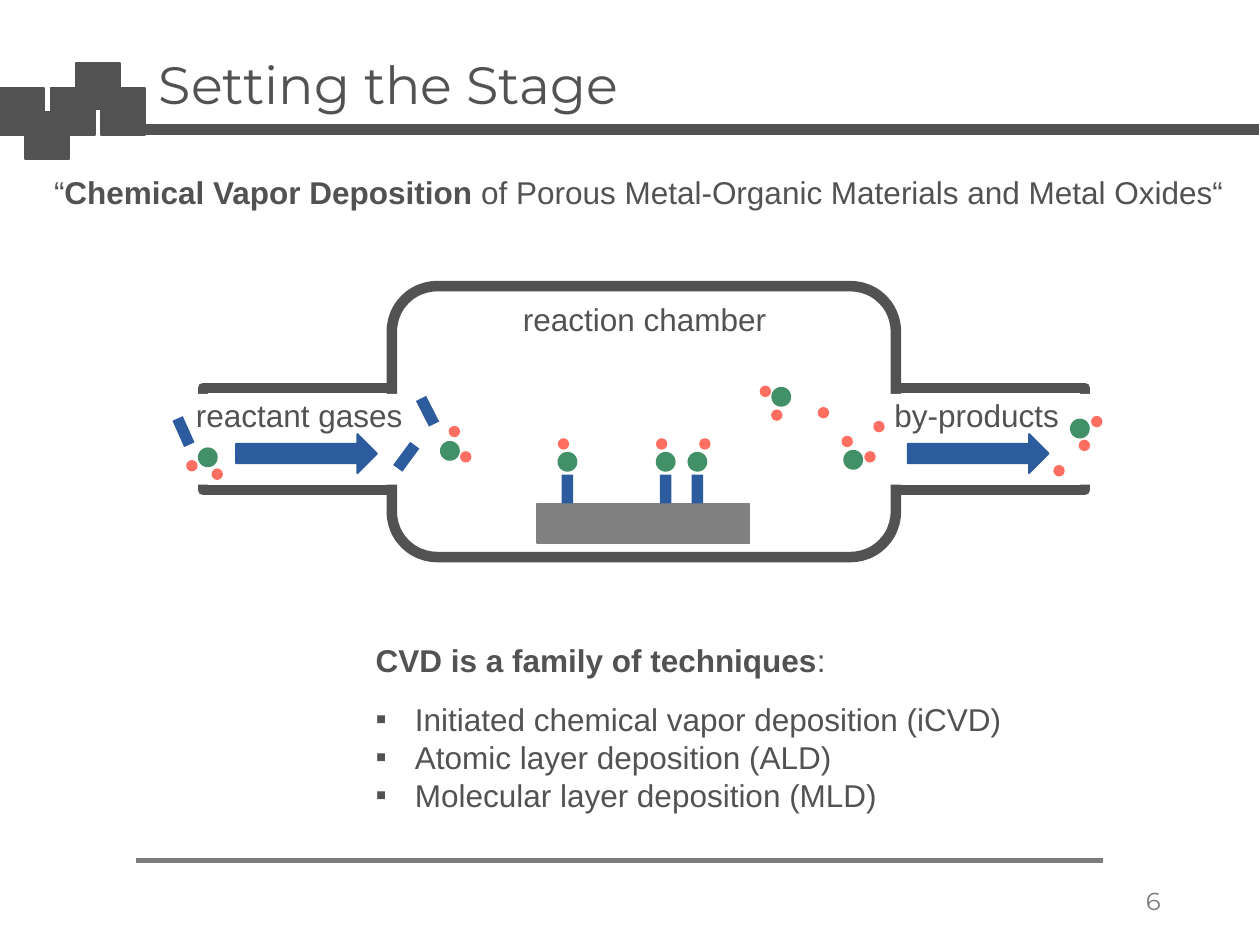
from lxml import etree
from pptx import Presentation
from pptx import util as u
from pptx.dml.color import RGBColor
from pptx.enum import shapes, text
from pptx.oxml.ns import qn

COLORS = {
    "ink": "525252",
    "rule": "7C7C7C",
    "paper": "FFFFFF",
    "substrate": "808080",
    "organic": "2D5C9E",
    "metal": "429067",
    "ligand": "FF6F61",
}
BODY_FONT = "Arial"
TITLE_FONT = "Montserrat"
METAL_SIZE = 0.4
LIGAND_SIZE = 0.23
ROD_WIDTH, ROD_HEIGHT = 0.23, 0.58
Shape = shapes.MSO_SHAPE


def color(name):
    return RGBColor.from_string(COLORS[name])


class SlideBuilder:
    def __init__(self, page):
        self.page = page

    def place(self, item, left, top, width, height):
        item.left, item.top = u.Cm(left), u.Cm(top)
        item.width, item.height = u.Cm(width), u.Cm(height)

    def shape(self, kind, left, top, width, height, fill, line=None, weight=1, angle=0):
        shape = self.page.shapes.add_shape(
            kind, u.Cm(left), u.Cm(top), u.Cm(width), u.Cm(height))
        shape.shadow.inherit = False
        shape.fill.solid()
        shape.fill.fore_color.rgb = color(fill)
        if line:
            shape.line.color.rgb = color(line)
            shape.line.width = u.Pt(weight)
        else:
            shape.line.fill.background()
        shape.rotation = angle
        return shape

    def rule(self, start, end, y, weight):
        line = self.page.shapes.add_connector(
            shapes.MSO_CONNECTOR.STRAIGHT, u.Cm(start), u.Cm(y), u.Cm(end), u.Cm(y))
        line.line.color.rgb = color("rule")
        line.line.width = u.Pt(weight)
        etree.SubElement(line._element.spPr, qn("a:effectLst"))

    def span(self, para, words, size=18, bold=False, font=BODY_FONT, ink="ink"):
        span = para.add_run()
        span.text = words
        span.font.name = font
        span.font.size = u.Pt(size)
        span.font.bold = bold
        span.font.color.rgb = color(ink)

    def text_box(self, left, top, width, height, wrap=True):
        box = self.page.shapes.add_textbox(
            u.Cm(left), u.Cm(top), u.Cm(width), u.Cm(height))
        box.text_frame.word_wrap = wrap
        return box.text_frame

    def label(self, words, left, top, width):
        frame = self.text_box(left, top, width, 1.02, wrap=False)
        self.span(frame.paragraphs[0], words)

    def title(self, words, left, top, width, height):
        title = self.page.shapes.title
        self.place(title, left, top, width, height)
        frame = title.text_frame
        frame.auto_size = text.MSO_AUTO_SIZE.NONE
        frame.vertical_anchor = text.MSO_ANCHOR.MIDDLE
        para = frame.paragraphs[0]
        para.alignment = text.PP_ALIGN.LEFT
        para.line_spacing = 0.9
        self.span(para, words, 30, font=TITLE_FONT)

    def bullet(self, para, mark=None, indent=0):
        properties = para._p.get_or_add_pPr()
        properties.set("marL", str(u.Cm(indent)))
        properties.set("indent", str(-u.Cm(indent)))
        if mark:
            etree.SubElement(properties, qn("a:buFont"), typeface=BODY_FONT)
            etree.SubElement(properties, qn("a:buChar"), char=mark)
        else:
            etree.SubElement(properties, qn("a:buNone"))

    def bullet_list(self, heading, items, left, top, width, height):
        body = self.page.placeholders[1]
        self.place(body, left, top, width, height)
        frame = body.text_frame
        frame.auto_size = text.MSO_AUTO_SIZE.NONE
        para = frame.paragraphs[0]
        self.bullet(para)
        para.space_before = u.Pt(0)
        self.span(para, heading, bold=True)
        self.span(para, ":")
        for index, item in enumerate(items):
            para = frame.add_paragraph()
            self.bullet(para, "▪", 0.79)
            para.space_before = u.Pt(0 if index else 12)
            self.span(para, item)

    def atom(self, x, y, size, fill):
        self.shape(Shape.OVAL, x - size / 2, y - size / 2, size, size, fill)

    def rod(self, x, y, angle=0):
        self.shape(Shape.RECTANGLE, x - ROD_WIDTH / 2, y - ROD_HEIGHT / 2,
                   ROD_WIDTH, ROD_HEIGHT, "organic", angle=angle)

    def molecule(self, metal, ligands):
        self.atom(*metal, METAL_SIZE, "metal")
        for ligand in ligands:
            self.atom(*ligand, LIGAND_SIZE, "ligand")


def add_frame(builder):
    builder.rule(2.74, 22.23, 17.35, 3)
    builder.shape(Shape.RECTANGLE, 2.87, 2.51, 22.5, 0.2, "ink", "ink")
    for column, top in enumerate((1.78, 2.26, 1.78, 1.27, 1.78)):
        builder.shape(Shape.RECTANGLE, column * 0.51, top, 0.89, 0.94, "ink", "ink")
    builder.title("Setting the Stage", 2.95, 0.89, 21.9, 1.73)
    number = builder.text_box(17.93, 17.65, 5.72, 1.02)
    number.vertical_anchor = text.MSO_ANCHOR.MIDDLE
    number.paragraphs[0].alignment = text.PP_ALIGN.RIGHT
    builder.span(number.paragraphs[0], "6", 14, font=TITLE_FONT, ink="rule")


def add_reactor(builder):
    for left in (4.09, 17.58):
        builder.shape(Shape.RECTANGLE, left, 7.82, 4.29, 2.06, "paper", "ink", 6)
    chamber = builder.shape(
        Shape.ROUNDED_RECTANGLE, 7.9, 5.77, 10.16, 5.46, "paper", "ink", 6)
    chamber.adjustments[0] = 0.167
    for left in (3.81, 17.81):
        builder.shape(Shape.RECTANGLE, left, 7.94, 4.29, 1.83, "paper")
    builder.shape(Shape.RECTANGLE, 10.82, 10.16, 4.29, 0.79,
                  "substrate", "substrate")
    for left in (4.76, 18.3):
        builder.shape(Shape.RIGHT_ARROW, left, 8.75, 2.84, 0.79, "organic", "organic")
    builder.label("reactant gases", 3.7, 7.85, 4.9)
    builder.label("reaction chamber", 10.29, 5.92, 5.92)
    builder.label("by-products", 17.78, 7.85, 4.04)


def add_molecules(builder):
    for x, ligand_shift in ((11.44, -0.08), (14.06, 0.15), (13.42, -0.08)):
        builder.rod(x, 9.86)
        builder.molecule((x, 9.31), [(x + ligand_shift, 8.95)])
    for metal, ligands in (
        ((4.19, 9.22), [(3.87, 9.39), (4.38, 9.56)]),
        ((9.07, 9.09), [(9.39, 9.21), (9.16, 8.7)]),
        ((15.75, 8), [(15.43, 7.89), (15.66, 8.37)]),
        ((17.2, 9.27), [(17.54, 9.21), (17.08, 8.9)]),
        ((21.77, 8.64), [(21.86, 8.98), (22.11, 8.5)]),
    ):
        builder.molecule(metal, ligands)
    for x, y in ((16.6, 8.32), (17.72, 8.6), (21.35, 9.49)):
        builder.atom(x, y, LIGAND_SIZE, "ligand")
    for x, y, angle in ((3.7, 8.7, 336), (8.19, 9.21, 36.3), (8.62, 8.29, 333)):
        builder.rod(x, y, angle)


def main():
    deck = Presentation()
    deck.slide_width, deck.slide_height = u.Cm(25.4), u.Cm(19.05)
    builder = SlideBuilder(deck.slides.add_slide(deck.slide_layouts[1]))
    add_frame(builder)
    add_reactor(builder)
    add_molecules(builder)
    builder.bullet_list(
        "CVD is a family of techniques",
        ["Initiated chemical vapor deposition (iCVD)",
         "Atomic layer deposition (ALD)",
         "Molecular layer deposition (MLD)"],
        7.32, 12.8, 13.49, 3.76)
    quote = builder.text_box(0.84, 3.45, 24.28, 1.17).paragraphs[0]
    quote.line_spacing = 0.9
    builder.span(quote, "“")
    builder.span(quote, "Chemical Vapor Deposition ", bold=True)
    builder.span(quote, "of Porous Metal-Organic Materials and Metal Oxides“")
    deck.save("out.pptx")


if __name__ == "__main__":
    main()
